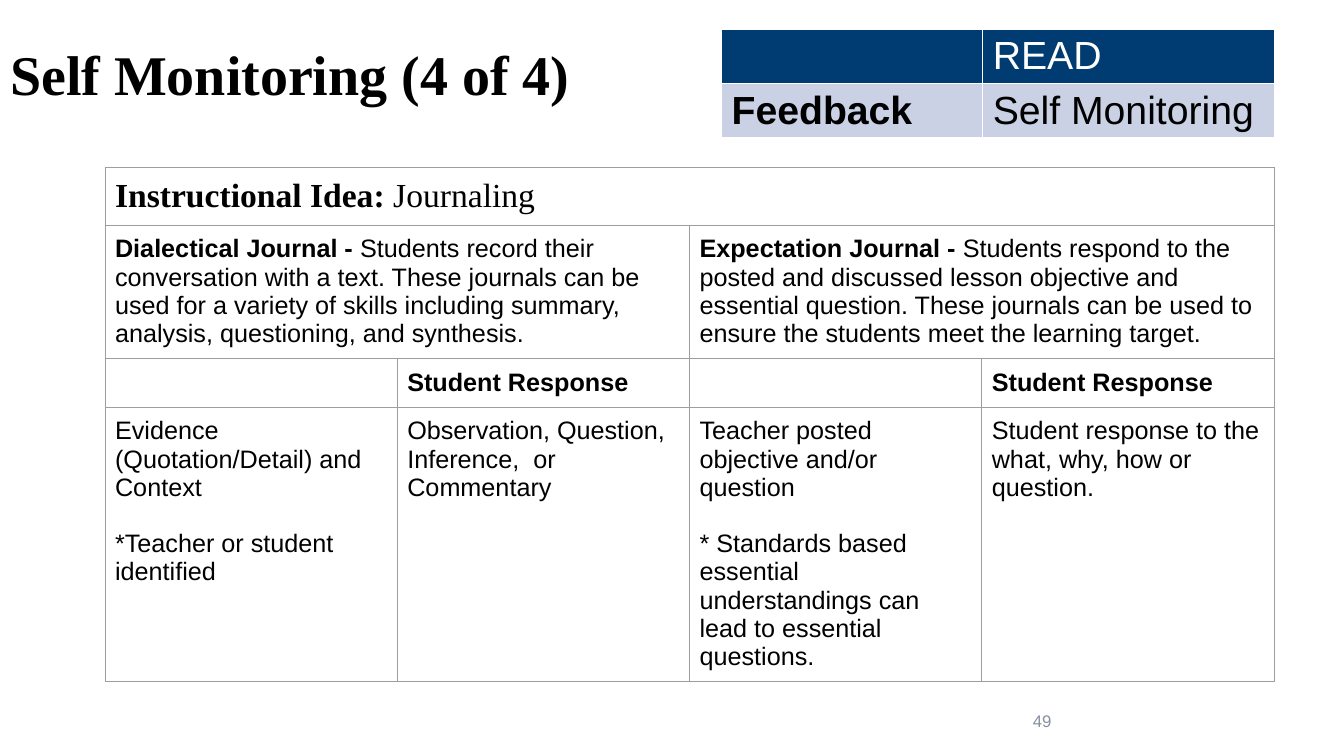
from lxml.etree import SubElement
from pptx import Presentation
from pptx.dml.color import RGBColor
from pptx.enum.text import MSO_ANCHOR, PP_ALIGN
from pptx.oxml.ns import qn
from pptx.util import Cm, Pt

COLORS = {
    "black": "000000",
    "white": "FFFFFF",
    "navy": "003C71",
    "lavender": "CAD1E4",
    "grid": "9E9E9E",
    "number": "888FA3",
}

TITLE = {"name": "Times New Roman", "size": Pt(40), "bold": True, "color": "black"}
NUMBER = {"name": "Arial", "size": Pt(12), "bold": False, "color": "number"}
BODY = {"name": "Arial", "size": Pt(18), "bold": False, "color": "black"}
BODY_BOLD = {**BODY, "bold": True}
IDEA = {**TITLE, "size": Pt(24)}
IDEA_PLAIN = {**IDEA, "bold": False}
FOCUS = {**BODY, "size": Pt(28)}
FOCUS_BOLD = {**FOCUS, "bold": True}
FOCUS_HEAD = {**FOCUS, "color": "white"}

PARAGRAPH_GAP = Pt(20)

# Each cell is a list of paragraphs, each paragraph a list of (text, format) runs
FOCUS_ROWS = [
    [[[("", FOCUS_HEAD)]], [[("READ", FOCUS_HEAD)]]],
    [[[("Feedback", FOCUS_BOLD)]], [[("Self Monitoring", FOCUS)]]],
]
EMPTY = [[("", BODY)]]
RESPONSE = [[("Student Response", BODY_BOLD)]]
JOURNAL_ROWS = [
    [[[("Instructional Idea: ", IDEA), ("Journaling", IDEA_PLAIN)]], None, None, None],
    [
        [[("Dialectical Journal - ", BODY_BOLD),
          ("Students record their conversation with a text. These journals can be used "
           "for a variety of skills including summary, analysis, questioning, and "
           "synthesis.", BODY)]],
        None,
        [[("Expectation Journal - ", BODY_BOLD),
          ("Students respond to the posted and discussed lesson objective and essential "
           "question. These journals can be used to ensure the students meet the "
           "learning target.", BODY)]],
        None,
    ],
    [EMPTY, RESPONSE, EMPTY, RESPONSE],
    [
        [[("Evidence (Quotation/Detail) and Context", BODY)],
         [("*Teacher or student identified", BODY)]],
        [[("Observation, Question, Inference,  or Commentary", BODY)]],
        [[("Teacher posted objective and/or question", BODY)],
         [("* Standards based essential understandings can lead to essential "
           "questions.", BODY)]],
        [[("Student response to the what, why, how or question.", BODY)]],
    ],
]


def set_values(target, values):
    for name, value in values.items():
        setattr(target, name, value)


def write_text(text_frame, paragraphs, alignment=PP_ALIGN.LEFT):
    for index, runs in enumerate(paragraphs):
        paragraph = text_frame.add_paragraph() if index else text_frame.paragraphs[0]
        paragraph.alignment = alignment
        if index:
            paragraph.space_before = PARAGRAPH_GAP
        for text, text_format in runs:
            run = paragraph.add_run()
            run.text = text
            values = dict(text_format)
            run.font.color.rgb = RGBColor.from_string(COLORS[values.pop("color")])
            set_values(run.font, values)


def set_borders(cell, color, width):
    properties = cell._tc.get_or_add_tcPr()
    for side in ("lnL", "lnR", "lnT", "lnB"):
        line = SubElement(properties, qn(f"a:{side}"), w=str(width))
        fill = SubElement(line, qn("a:solidFill"))
        SubElement(fill, qn("a:srgbClr"), val=COLORS[color])


def add_grid(slide, box, rows, column_shares, row_heights, fills, border, margins):
    """Place a table in the box; None in a row extends the cell to its left."""
    left, top, width = box
    frame = slide.shapes.add_table(
        len(rows), len(column_shares), left, top, width, sum(row_heights))
    table = frame.table
    set_values(table, {"first_row": False, "horz_banding": False})
    for column, share in zip(table.columns, column_shares):
        column.width = int(width * share / sum(column_shares))
    for row, height in zip(table.rows, row_heights):
        row.height = height
    for row_index, (row, fill) in enumerate(zip(rows, fills)):
        for column_index, paragraphs in enumerate(row):
            cell = table.cell(row_index, column_index)
            set_borders(cell, *border)
            if fill:
                cell.fill.solid()
                cell.fill.fore_color.rgb = RGBColor.from_string(COLORS[fill])
            else:
                cell.fill.background()
            set_values(cell, margins)
            if paragraphs is None:
                continue
            write_text(cell.text_frame, paragraphs)
            last = column_index
            while last + 1 < len(row) and row[last + 1] is None:
                last += 1
            if last > column_index:
                cell.merge(table.cell(row_index, last))


def add_title(slide, box):
    title = slide.shapes.title
    set_values(title, dict(zip(("left", "top", "width", "height"), box)))
    title.text_frame.vertical_anchor = MSO_ANCHOR.MIDDLE
    write_text(title.text_frame, [[("Self Monitoring (4 of 4)", TITLE)]])


def add_focus_table(slide, box):
    margins = {"margin_left": Cm(0.25), "margin_right": Cm(0.25),
               "margin_top": Cm(0.13), "margin_bottom": Cm(0.13)}
    add_grid(slide, box, FOCUS_ROWS, (6.58, 7.34), [Cm(1.36)] * 2,
             ("navy", "lavender"), ("white", Pt(1)), margins)


def add_journal_table(slide, box):
    sides = ("left", "right", "top", "bottom")
    margins = {f"margin_{side}": Cm(0.25) for side in sides}
    heights = [Cm(height) for height in (1.45, 3.36, 1.23, 6.91)]
    add_grid(slide, box, JOURNAL_ROWS, (1, 1, 1, 1), heights,
             (None,) * 4, ("grid", Pt(0.75)), margins)


def add_slide_number(slide, box):
    text_frame = slide.shapes.add_textbox(*box).text_frame
    set_values(text_frame, {"word_wrap": True, "vertical_anchor": MSO_ANCHOR.MIDDLE})
    write_text(text_frame, [[("49", NUMBER)]], PP_ALIGN.RIGHT)


def main():
    presentation = Presentation()
    set_values(presentation, {"slide_width": Cm(33.87), "slide_height": Cm(19.05)})
    slide = presentation.slides.add_slide(presentation.slide_layouts[5])

    # Header
    add_title(slide, (Cm(0), Cm(0), Cm(29.21), Cm(3.68)))
    add_focus_table(slide, (Cm(18.19), Cm(0.74), Cm(13.92)))

    # Journaling ideas
    add_journal_table(slide, (Cm(2.65), Cm(4.22), Cm(29.46)))

    # Footer
    add_slide_number(slide, (Cm(23.93), Cm(17.65), Cm(2.82), Cm(1.02)))

    presentation.save("out.pptx")


if __name__ == "__main__":
    main()
